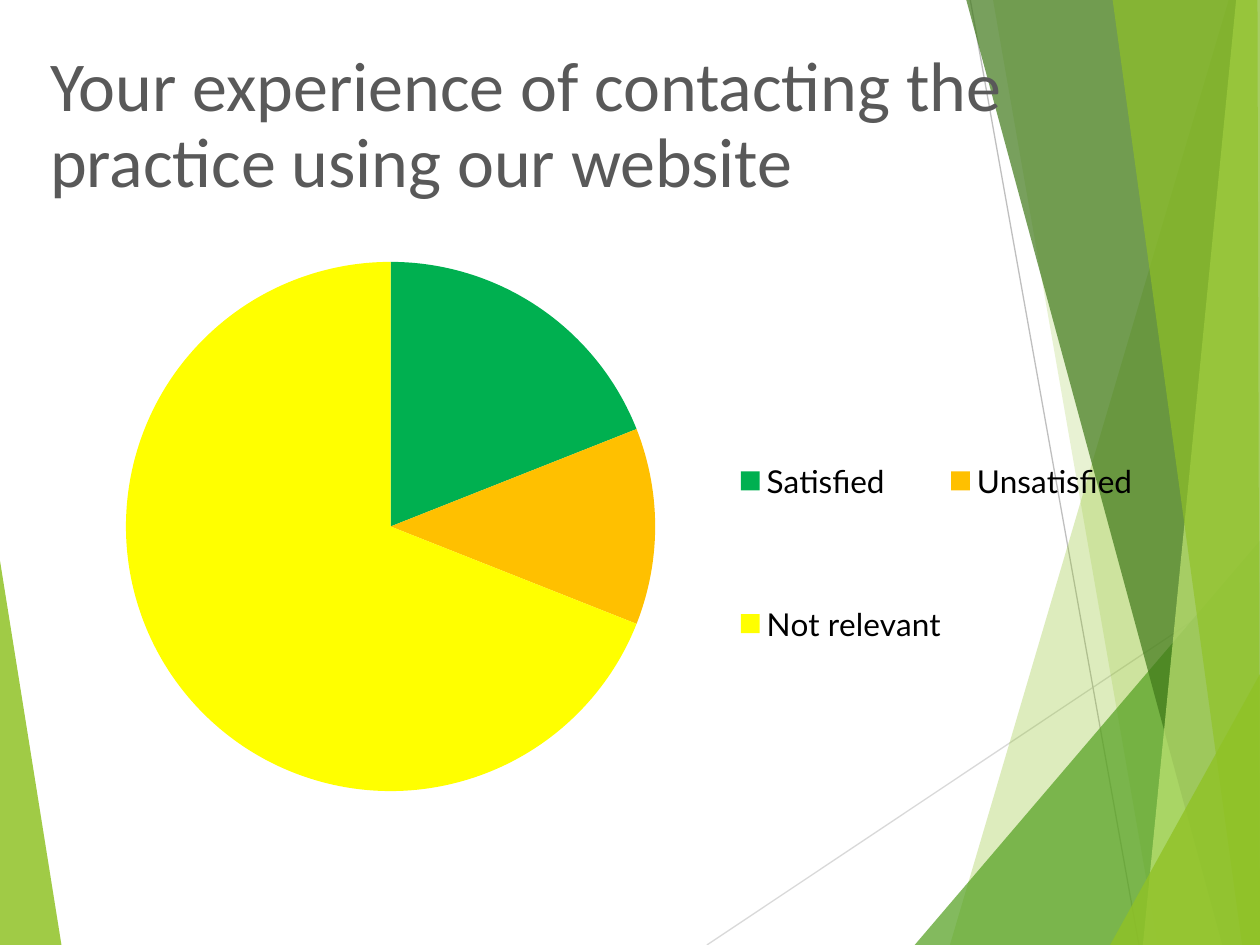
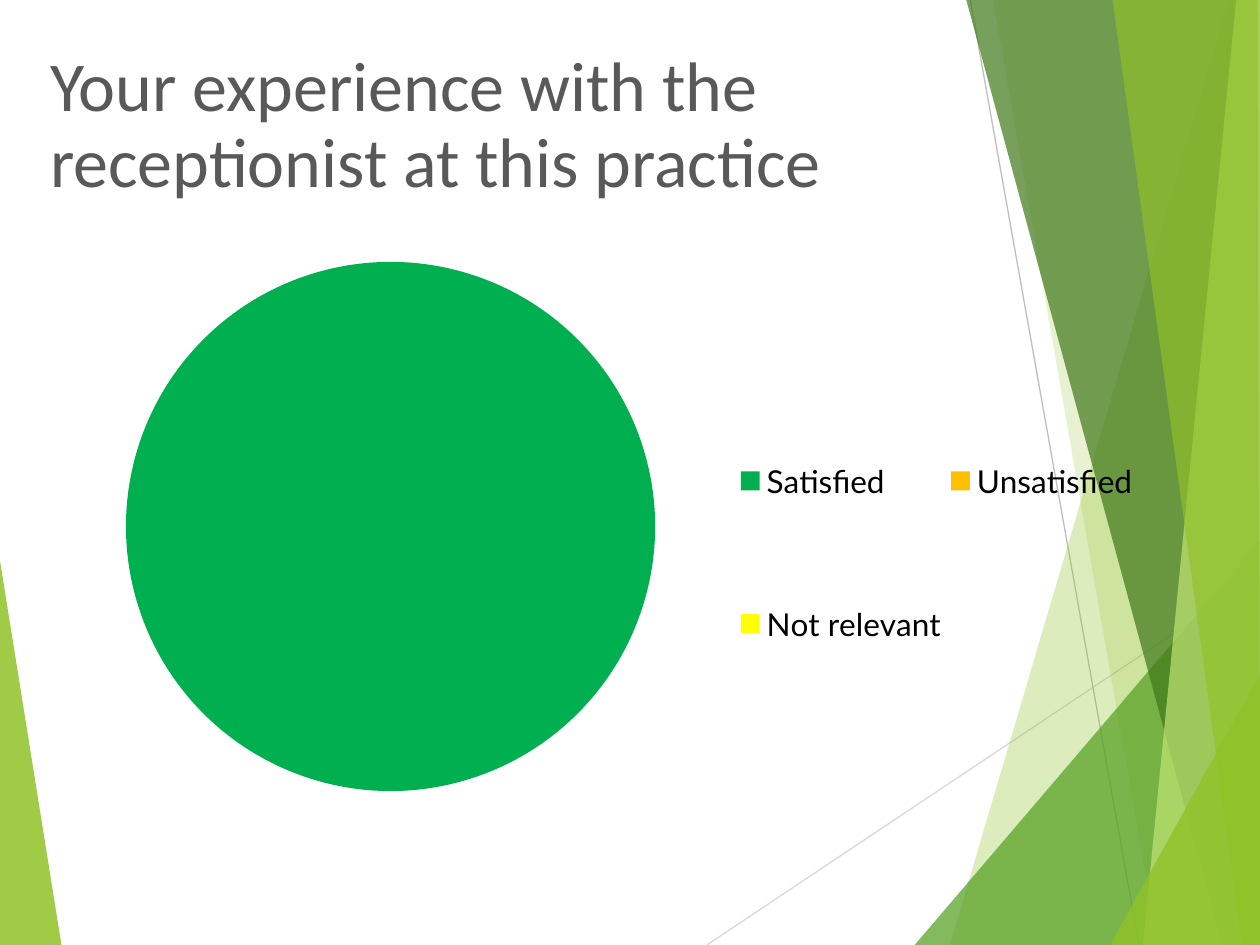
"""Build two patient survey slides, each a title and a pie chart on a faceted background."""
from dataclasses import dataclass

from lxml.etree import SubElement
from pptx import Presentation
from pptx.chart.data import CategoryChartData
from pptx.dml.color import RGBColor
from pptx.enum.chart import XL_CHART_TYPE, XL_LEGEND_POSITION
from pptx.enum.shapes import MSO_CONNECTOR
from pptx.enum.text import MSO_ANCHOR
from pptx.oxml import parse_xml
from pptx.oxml.ns import nsdecls, qn
from pptx.util import Cm, Pt

ANSWERS = ["Satisfied", "Unsatisfied", "Not relevant"]
SURVEY = [
    ("Your experience of contacting the practice using our website", (19, 12, 69)),
    ("Your experience with the receptionist at this practice", (100, 0, 0)),
]


@dataclass(frozen=True)
class Theme:
    title_font: str = "Calibri"
    title_size: int = 40
    title_color: str = "595959"
    chart_font: str = "Lato"
    chart_size: int = 18
    chart_color: str = "000000"
    answer_colors: tuple = ("00B050", "FFC000", "FFFF00")
    lime: str = "90C226"
    green: str = "54A021"
    forest: str = "3F7819"
    pale: str = "C0E474"
    line_width: float = 0.75


THEME = Theme()
W, H = 25.4, 19.05
TITLE_BOX = (0.76, 0.91, 19.81, 3.66)
CHART_BOX = (-2.69, 4.93, 25.8, 11.38)
PIE_AREA = (2.54, 5.28, 10.67, 10.67)
LEGEND_AREA = (14.73, 7.2, 8.3, 7.87)

LINES = [
    ((14.25, H), (W, 11.61), "D9D9D9"),
    ((19.56, 0), (22.96, H), "BFBFBF"),
]
FACETS = [
    ([(0, 11.3), (1.24, H), (0, H)], THEME.lime, 85),
    ([(24.77, 0), (19.15, H), (W, H), (W, 0)], THEME.lime, 30),
    ([(20.02, 0), (23.34, H), (W, H), (W, 0)], THEME.lime, 20),
    ([(18.44, H), (W, 10.9), (W, H)], THEME.green, 72),
    ([(19.48, 0), (24.64, H), (W, H), (W, 0)], THEME.forest, 70),
    ([(24.92, 0), (23.04, H), (W, H), (W, 0)], THEME.pale, 70),
    ([(22.43, 0), (25.04, H), (W, H), (25.35, 0)], THEME.lime, 65),
    ([(22.38, H), (W, 13.59), (W, H)], THEME.lime, 80),
]


def rgb(color):
    return RGBColor.from_string(color)


def cm(values):
    return [Cm(v) for v in values]


def style_font(font, name, size, color):
    font.name, font.size = name, Pt(size)
    font.color.rgb = rgb(color)


def add_background(slide):
    for start, end, color in LINES:
        line = slide.shapes.add_connector(MSO_CONNECTOR.STRAIGHT, *cm(start + end))
        line.line.color.rgb = rgb(color)
        line.line.width = Pt(THEME.line_width)
        SubElement(line._element.spPr, qn("a:effectLst"))
    for points, color, opacity in FACETS:
        first, *rest = [cm(point) for point in points]
        builder = slide.shapes.build_freeform(*first)
        builder.add_line_segments(rest, close=True)
        sp = builder.convert_to_shape()
        sp.shadow.inherit = False
        sp.line.fill.background()
        sp.fill.solid()
        sp.fill.fore_color.rgb = rgb(color)
        fill = sp._element.spPr.find(qn("a:solidFill"))
        SubElement(fill[0], qn("a:alpha"), val=str(opacity * 1000))


def add_title(slide, text):
    tf = slide.shapes.add_textbox(*cm(TITLE_BOX)).text_frame
    tf.word_wrap = True
    tf.vertical_anchor = MSO_ANCHOR.TOP
    tf.text = text
    p = tf.paragraphs[0]
    p.line_spacing = 0.9
    style_font(p.runs[0].font, THEME.title_font, THEME.title_size, THEME.title_color)


def manual_layout(area, target=""):
    left, top, width, height = CHART_BOX
    x, y, w, h = area
    parts = {"x": (x - left) / width, "y": (y - top) / height,
             "w": w / width, "h": h / height}
    modes = '<c:xMode val="edge"/><c:yMode val="edge"/>'
    sizes = "".join(f'<c:{k} val="{v:.4f}"/>' for k, v in parts.items())
    return parse_xml(f'<c:layout {nsdecls("c")}><c:manualLayout>{target}{modes}{sizes}'
                     '</c:manualLayout></c:layout>')


def place(element, layout, index):
    for old in element.findall(qn("c:layout")):
        element.remove(old)
    element.insert(index, layout)


def add_pie(slide, values):
    data = CategoryChartData()
    data.categories = ANSWERS
    data.add_series("Series 1", values)
    chart = slide.shapes.add_chart(XL_CHART_TYPE.PIE, *cm(CHART_BOX), data).chart
    chart.has_title = False
    style_font(chart.font, THEME.chart_font, THEME.chart_size, THEME.chart_color)
    chart.has_legend = True
    chart.legend.position = XL_LEGEND_POSITION.RIGHT
    chart.legend.include_in_layout = False
    place(chart.legend._element, manual_layout(LEGEND_AREA), 1)
    plot_area = chart._chartSpace.chart.plotArea
    place(plot_area, manual_layout(PIE_AREA, '<c:layoutTarget val="inner"/>'), 0)
    plot = chart.plots[0]
    plot.vary_by_categories = True
    for i, color in enumerate(THEME.answer_colors):
        point = plot.series[0].points[i].format
        point.fill.solid()
        point.fill.fore_color.rgb = rgb(color)
        point.line.fill.background()


def main():
    prs = Presentation()
    prs.slide_width, prs.slide_height = cm((W, H))
    for title, values in SURVEY:
        slide = prs.slides.add_slide(prs.slide_layouts[6])
        add_background(slide)
        add_title(slide, title)
        add_pie(slide, values)
    prs.save("out.pptx")


if __name__ == "__main__":
    main()
